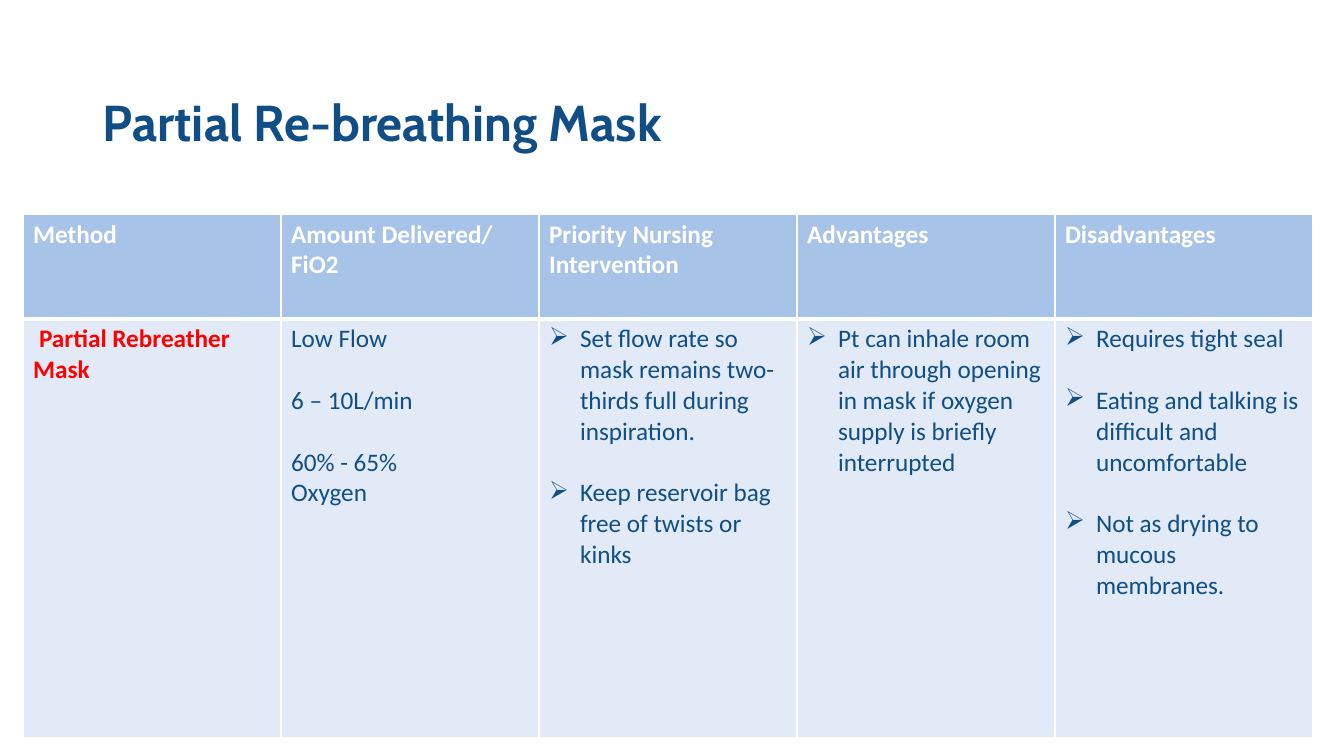
from lxml.etree import SubElement
from pptx import Presentation
from pptx.dml.color import RGBColor as RGB
from pptx.enum.text import MSO_ANCHOR as Anchor
from pptx.oxml.ns import qn
from pptx.util import Pt

NAVY = RGB(0x10, 0x4E, 0x85)
RED = RGB(0xFF, 0x00, 0x00)
WHITE = RGB(0xFF, 0xFF, 0xFF)
HEAD_BLUE = RGB(0xA7, 0xC4, 0xE8)
BODY_BLUE = RGB(0xE1, 0xEA, 0xF6)

EMU_PER_PX = 914400 / 100.8
LINE_GAP = 22  # points, one empty line of body text

HEADERS = ["Method", "Amount Delivered/ FiO2", "Priority Nursing Intervention",
           "Advantages", "Disadvantages"]
METHOD = "Partial Rebreather Mask"
AMOUNTS = [("Low Flow", 0), ("6 – 10L/min", LINE_GAP),
           ("60% - 65%", LINE_GAP), ("Oxygen", 0)]
BULLET_COLUMNS = [
    ["Set flow rate so mask remains two-thirds full during inspiration.",
     "Keep reservoir bag free of twists or kinks"],
    ["Pt can inhale room air through opening in mask if oxygen supply is "
     "briefly interrupted"],
    ["Requires tight seal", "Eating and talking is difficult and uncomfortable",
     "Not as drying to mucous membranes."],
]


def px(n):
    return round(n * EMU_PER_PX)


def add_text(tf, text, size=18, font="Calibri", color=NAVY, bold=False,
             before=0, line=None, left=0, first=0, bullet=None):
    """Write one paragraph, filling the empty first one if there is one."""
    p = tf.paragraphs[0]
    if p.runs:
        p = tf.add_paragraph()
    pPr = p._p.get_or_add_pPr()
    pPr.set("marL", str(px(left)))
    pPr.set("indent", str(px(first)))
    if bullet:
        SubElement(pPr, qn("a:buChar"), char=bullet)
    if before:
        p.space_before = Pt(before)
    if line:
        p.line_spacing = line
    r = p.add_run()
    r.text = text
    r.font.size, r.font.name, r.font.bold = Pt(size), font, bold
    r.font.color.rgb = color


class Deck:
    def __init__(self, width, height):
        self.prs = Presentation()
        self.prs.slide_width, self.prs.slide_height = px(width), px(height)
        self.s = self.prs.slides.add_slide(self.prs.slide_layouts[6])

    def title(self, text, x, y, w, h):
        tf = self.s.shapes.add_textbox(px(x), px(y), px(w), px(h)).text_frame
        tf.word_wrap = True
        tf.vertical_anchor = Anchor.MIDDLE
        add_text(tf, text, size=36, font="Cabin", bold=True, line=0.9)

    def table(self, x, y, col_w, cols, row_heights):
        frame = self.s.shapes.add_table(len(row_heights), cols, px(x), px(y),
                                        px(col_w * cols), px(sum(row_heights)))
        tbl = frame.table
        tbl.horz_banding = False
        for col in tbl.columns:
            col.width = px(col_w)
        for row, h in zip(tbl.rows, row_heights):
            row.height = px(h)
        return tbl

    def cell(self, cell, fill, top=1, bottom=1):
        """Set white borders (points) and fill, and return the text frame."""
        tcPr = cell._tc.get_or_add_tcPr()
        for side, width in (("L", 1), ("R", 1), ("T", top), ("B", bottom)):
            ln = SubElement(tcPr, qn(f"a:ln{side}"), w=str(Pt(width)))
            solid = SubElement(ln, qn("a:solidFill"))
            SubElement(solid, qn("a:srgbClr"), val=str(WHITE))
        cell.fill.solid()
        cell.fill.fore_color.rgb = fill
        return cell.text_frame


def main():
    deck = Deck(1344, 756)
    deck.title("Partial Re-breathing Mask", 93, 52, 1159, 146)
    tbl = deck.table(23, 214, 258, len(HEADERS), [105, 419])

    # Header row
    for c, header in enumerate(HEADERS):
        tf = deck.cell(tbl.cell(0, c), HEAD_BLUE, bottom=3)
        add_text(tf, header, color=WHITE, bold=True)

    # Body row: method, amounts, then the bulleted columns
    method, amount, *bulleted = [deck.cell(tbl.cell(1, c), BODY_BLUE, top=3)
                                 for c in range(len(HEADERS))]
    add_text(method, METHOD, color=RED, bold=True, first=6)
    for text, gap in AMOUNTS:
        add_text(amount, text, before=gap)
    for tf, points in zip(bulleted, BULLET_COLUMNS):
        for i, point in enumerate(points):
            add_text(tf, point, before=LINE_GAP if i else 0,
                     left=31, first=-31, bullet="➢")

    deck.prs.save("out.pptx")


if __name__ == "__main__":
    main()
